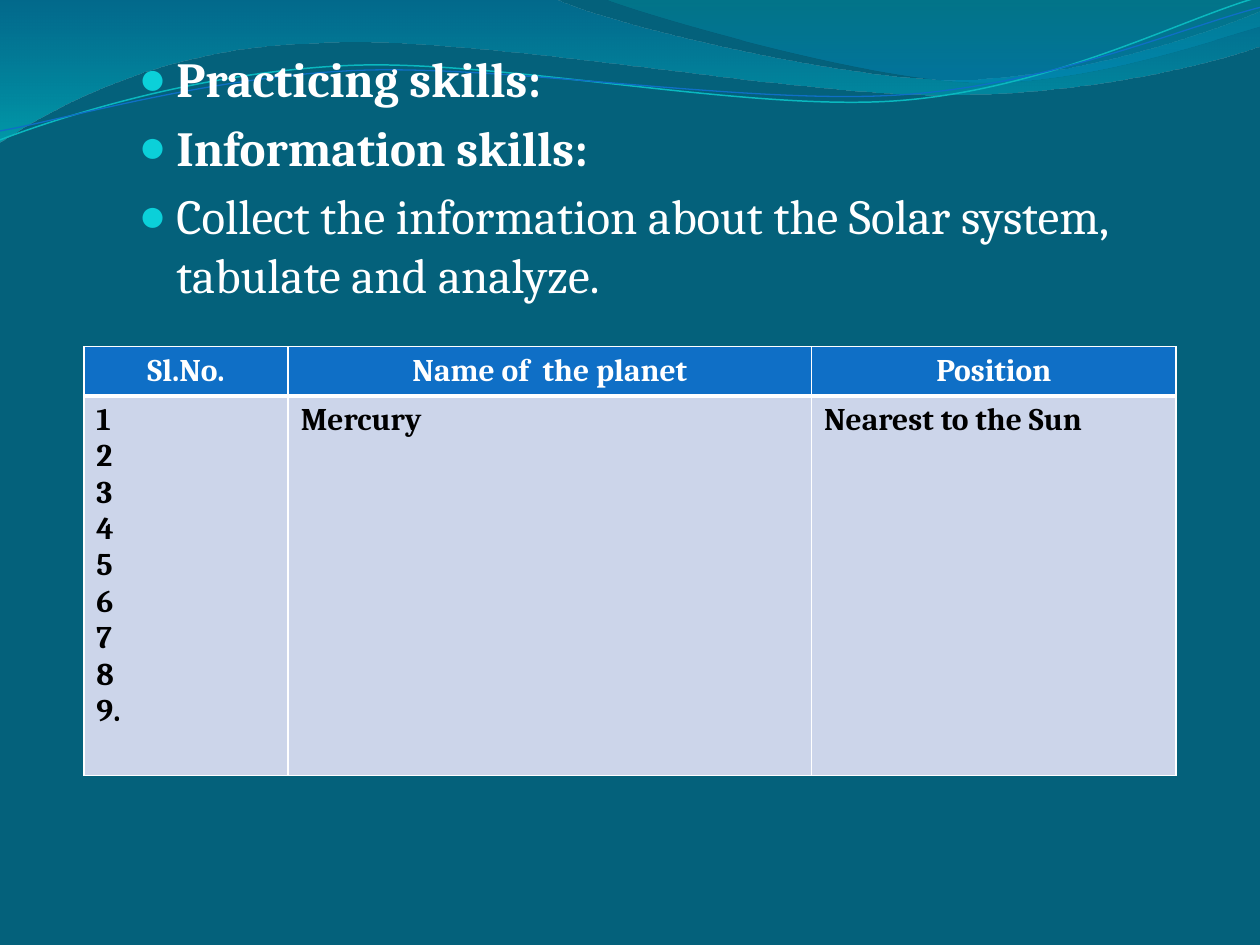
from dataclasses import dataclass
from math import cos, radians, sin

from lxml.etree import SubElement
from pptx import Presentation
from pptx.dml.color import RGBColor as Rgb
from pptx.enum.text import MSO_AUTO_SIZE as Fit, PP_ALIGN as Align
from pptx.oxml.ns import qn
from pptx.util import Cm, Pt

DEEP = Rgb(0x04, 0x61, 0x7B)
WHITE = Rgb(0xFF, 0xFF, 0xFF)
BLACK = Rgb(0, 0, 0)
BLUE = Rgb(0x0F, 0x6F, 0xC6)
PALE = Rgb(0xCC, 0xD5, 0xEA)
AQUA = Rgb(0x0B, 0xD0, 0xD9)
TEAL = Rgb(0x0A, 0xB8, 0xBF)
FACE = "Cambria"
TILT = -2.7
HUB = (12.69, 1.47)


@dataclass
class Stop:
    pos: float
    color: Rgb
    alpha: int


@dataclass
class Wave:
    """A start point, then steps of two (line) or six (Bezier) numbers in cm."""
    start: tuple
    steps: list
    stops: tuple = ()
    color: Rgb = None
    width: float = 0
    turn: float = 0


WAVES = [
    Wave((0, 0), [
        (11.18, -0.03),
        (12.09, 0.43, 16.87, 1.6, 19.25, 1.6),
        (21.67, 1.6, 24.33, 0.66, 25.4, 0.23),
        (25.43, 0.91),
        (24.97, 1.12, 22.1, 1.93, 18.95, 1.91),
        (15.8, 1.91, 9.7, 0.71, 6.53, 0.86),
        (3.28, 0.91, 1.17, 2.11, -0.03, 2.87),
        (0, 0),
    ], stops=(Stop(0, Rgb(0x00, 0x74, 0xA1), 45),
              Stop(1, Rgb(0x00, 0xC6, 0xCF), 55))),
    Wave((12.17, -0.03), [
        (12.93, 0.28, 17.32, 1.57, 19.53, 1.65),
        (21.74, 1.75, 24.41, 0.81, 25.4, 0.53),
        (25.4, 0),
        (12.17, -0.03),
    ], stops=(Stop(0, Rgb(0x00, 0xA1, 0xA9), 30),
              Stop(0.8, Rgb(0x00, 0x8B, 0xBF), 45))),
    Wave((0, 2.82), [
        (1.22, 2.36, 4.01, 1.45, 7.04, 1.32),
        (10.03, 1.19, 15.06, 2.26, 18.11, 2.03),
        (21.16, 1.8, 23.83, 0.38, 25.35, -0.05),
    ], color=TEAL, width=0.85, turn=TILT),
    Wave((0, 2.64), [
        (1.19, 2.44, 4.17, 1.55, 7.19, 1.42),
        (10.24, 1.3, 15.16, 2.13, 18.21, 1.91),
        (21.23, 1.7, 23.9, 0.53, 25.4, 0.15),
    ], color=BLUE, width=0.75, turn=TILT),
]

BULLETS = [
    ("Practicing skills:", True),
    ("Information skills:", True),
    ("Collect the information about the Solar system, tabulate and analyze.", False),
]


@dataclass
class Row:
    height: float
    cells: tuple
    fill: Rgb
    ink: Rgb
    align: Align
    edges: dict


ROWS = [
    Row(0.99, ("Sl.No.", "Name of  the planet", "Position"), BLUE, WHITE,
        Align.CENTER, {"L": 1, "R": 1, "T": 1, "B": 3}),
    Row(7.65, ("1\n2\n3\n4\n5\n6\n7\n8\n9.", "Mercury", "Nearest to the Sun"),
        PALE, BLACK, Align.LEFT, {"L": 1, "R": 1, "T": 3, "B": 1}),
]
COLS = (4.12, 10.55, 7.35)


def unturn(x: float, y: float, turn: float) -> tuple:
    """Undo a rotation about the hub, and give the point in EMU."""
    a, dx, dy = radians(-turn), x - HUB[0], y - HUB[1]
    return (Cm(HUB[0] + dx * cos(a) - dy * sin(a)),
            Cm(HUB[1] + dx * sin(a) + dy * cos(a)))


def bend(shape, steps: list) -> None:
    """Join each three points of a six-number step into one Bezier curve."""
    lines = iter(list(shape.element.spPr.iter(qn("a:lnTo"))))
    for step in steps:
        trio = [next(lines) for _ in range(len(step) // 2)]
        if len(trio) == 3:
            curve = SubElement(trio[0].getparent(), qn("a:cubicBezTo"))
            trio[0].addprevious(curve)
            for line in trio:
                curve.append(line[0])
                line.getparent().remove(line)


def draw_wave(slide, wave: Wave) -> None:
    pairs = [wave.start] + [s[i:i + 2] for s in wave.steps for i in range(0, len(s), 2)]
    first, *rest = [unturn(x, y, wave.turn) for x, y in pairs]
    pen = slide.shapes.build_freeform(*first)
    pen.add_line_segments(rest, close=bool(wave.stops))
    shape = pen.convert_to_shape()
    bend(shape, wave.steps)
    shape.rotation = wave.turn
    shape.shadow.inherit = False
    if not wave.stops:
        shape.fill.background()
        shape.line.color.rgb = wave.color
        shape.line.width = Pt(wave.width)
        return
    shape.line.fill.background()
    shape.fill.gradient()
    shape.fill.gradient_angle = 270
    for stop, want in zip(shape.fill.gradient_stops, wave.stops):
        stop.color.rgb = want.color
        stop.position = want.pos
    tints = shape.element.spPr.iter(qn("a:srgbClr"))
    for tint, want in zip(tints, wave.stops):
        SubElement(tint, qn("a:alpha"), val=str(want.alpha * 1000))


def style(font, size: float, color: Rgb, bold: bool) -> None:
    for name, value in {"name": FACE, "size": Pt(size), "bold": bold}.items():
        setattr(font, name, value)
    font.color.rgb = color


def add_bullet(para) -> None:
    props = para._p.get_or_add_pPr()
    props.set("marL", str(Cm(0.76)))
    props.set("indent", str(-Cm(0.76)))
    SubElement(SubElement(props, qn("a:buClr")), qn("a:srgbClr"), val=str(AQUA))
    SubElement(props, qn("a:buSzPct"), val="95000")
    SubElement(props, qn("a:buChar"), char="●")


def fill_body(body) -> None:
    box = {"left": 2.54, "top": 0.85, "width": 21.59, "height": 15.88}
    for name, value in box.items():
        setattr(body, name, Cm(value))
    frame = body.text_frame
    frame.auto_size = Fit.NONE
    frame.text = "\n".join(text for text, _ in BULLETS)
    for para, (_, bold) in zip(frame.paragraphs, BULLETS):
        add_bullet(para)
        style(para.runs[0].font, 28, WHITE, bold)


def fill_cell(cell, text: str, row: Row) -> None:
    cell.text = text
    for para in cell.text_frame.paragraphs:
        para.alignment = row.align
        style(para.runs[0].font, 18, row.ink, True)
    props = cell._tc.get_or_add_tcPr()
    for side, width in row.edges.items():
        edge = SubElement(props, qn("a:ln" + side), w=str(Pt(width)))
        SubElement(SubElement(edge, qn("a:solidFill")), qn("a:srgbClr"), val=str(WHITE))
    cell.fill.solid()
    cell.fill.fore_color.rgb = row.fill


def add_grid(slide) -> None:
    size = Cm(sum(COLS)), Cm(sum(row.height for row in ROWS))
    grid = slide.shapes.add_table(len(ROWS), len(COLS), Cm(1.69), Cm(6.99), *size).table
    for col, width in zip(grid.columns, COLS):
        col.width = Cm(width)
    for r, row in enumerate(ROWS):
        grid.rows[r].height = Cm(row.height)
        for c, text in enumerate(row.cells):
            fill_cell(grid.cell(r, c), text, row)


def main() -> None:
    deck = Presentation()
    deck.slide_width, deck.slide_height = Cm(25.4), Cm(19.05)
    slide = deck.slides.add_slide(deck.slide_layouts[1])
    slide.background.fill.solid()
    slide.background.fill.fore_color.rgb = DEEP
    title, body = slide.placeholders
    tree = title.element.getparent()
    tree.remove(title.element)
    for wave in WAVES:
        draw_wave(slide, wave)
    fill_body(body)
    tree.append(body.element)  # text in front of the waves
    add_grid(slide)
    deck.save("out.pptx")


if __name__ == "__main__":
    main()
